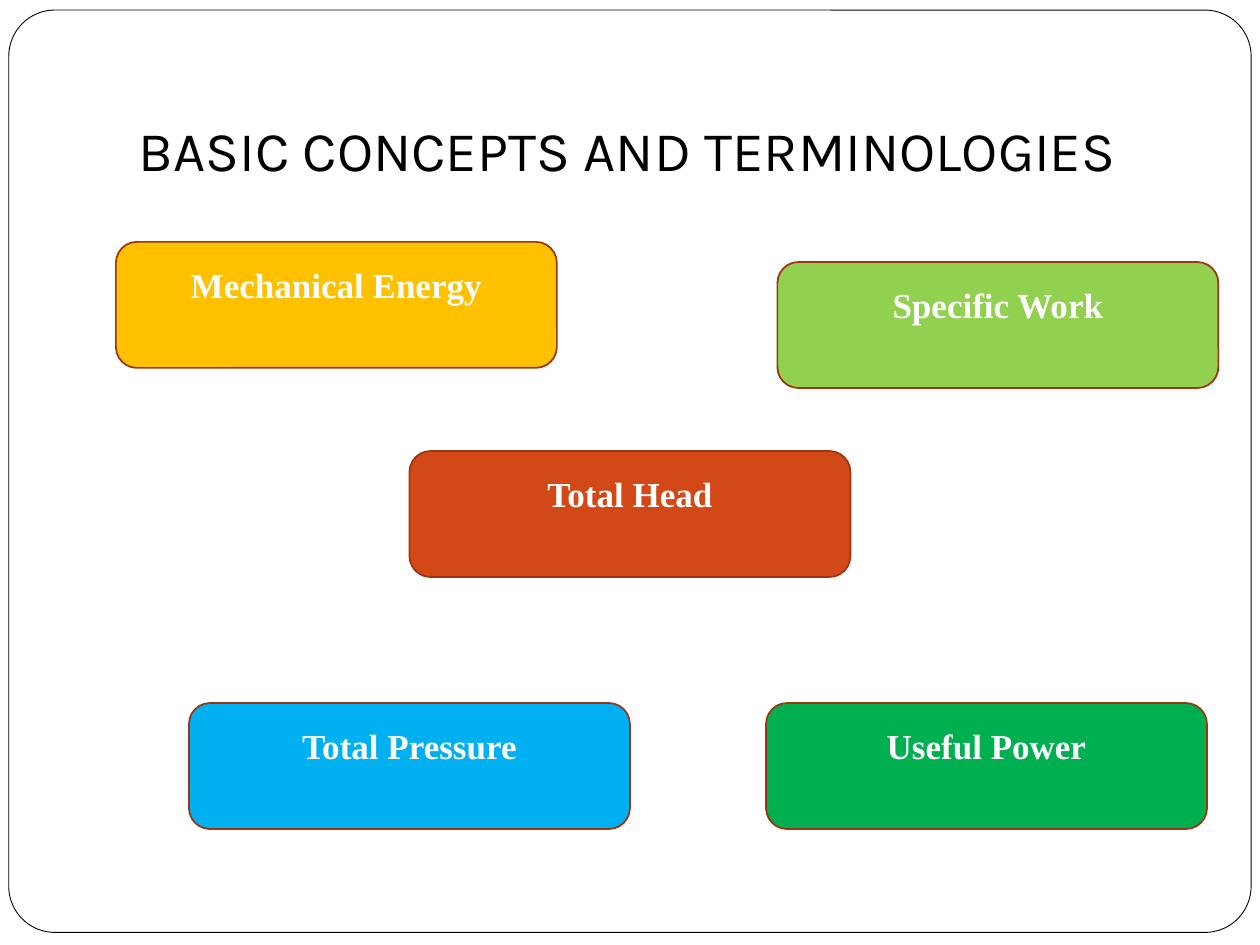
import pptx
import pptx.dml.color
import pptx.enum.shapes
import pptx.enum.text
import pptx.util

Inches = pptx.util.Inches
Pt = pptx.util.Pt
ALIGN = pptx.enum.text.PP_ALIGN
ANCHOR = pptx.enum.text.MSO_ANCHOR

COLORS = {
    "white": "FFFFFF",
    "black": "000000",
    "outline": "9C3511",
    "amber": "FFC000",
    "rust": "D34817",
    "lime": "92D050",
    "sky": "00B0F0",
    "green": "00B050",
}

TITLE_FONT = {"name": "Karla", "size": Pt(32), "bold": False}
CONCEPT_FONT = {"name": "Times New Roman", "size": Pt(20), "bold": True}

TITLE_FRAME = {
    "word_wrap": True,
    "auto_size": pptx.enum.text.MSO_AUTO_SIZE.NONE,
    "vertical_anchor": ANCHOR.BOTTOM,
    "margin_left": Inches(0.1),
    "margin_right": Inches(0.1),
    "margin_top": Inches(0.05),
    "margin_bottom": Inches(0.1),
}
CONCEPT_FRAME = {
    "word_wrap": True,
    "vertical_anchor": ANCHOR.MIDDLE,
    "margin_top": Inches(0.05),
    "margin_bottom": Inches(0.37),
}

CONCEPT_SIZE = (3.5, 1)
CONCEPTS = [
    ("Mechanical Energy", 0.92, 1.92, "amber"),
    ("Total Head", 3.25, 3.58, "rust"),
    ("Specific Work", 6.17, 2.08, "lime"),
    ("Total Pressure", 1.5, 5.58, "sky"),
    ("Useful Power", 6.08, 5.58, "green"),
]


def color(name):
    return pptx.dml.color.RGBColor.from_string(COLORS[name])


def apply_format(target, values):
    for attribute, value in values.items():
        setattr(target, attribute, value)


def write_text(shape, text, frame_format, font_format, color_name, alignment):
    text_frame = shape.text_frame
    text_frame.text = text
    apply_format(text_frame, frame_format)
    paragraph = text_frame.paragraphs[0]
    paragraph.alignment = alignment
    font = paragraph.runs[0].font
    apply_format(font, font_format)
    font.color.rgb = color(color_name)


def add_rounded_box(slide, box, fill, line, line_width):
    shape = slide.shapes.add_shape(
        pptx.enum.shapes.MSO_SHAPE.ROUNDED_RECTANGLE, *map(Inches, box)
    )
    shape.shadow.inherit = False
    shape.fill.solid()
    shape.fill.fore_color.rgb = color(fill)
    shape.line.color.rgb = color(line)
    shape.line.width = Pt(line_width)
    return shape


def add_border(slide, box):
    border = add_rounded_box(slide, box, "white", "black", 0.5)
    border.adjustments[0] = 0.05
    slide.shapes.title.element.addprevious(border.element)


def place_title(slide, box, text):
    title = slide.shapes.title
    apply_format(title, dict(zip(("left", "top", "width", "height"), map(Inches, box))))
    write_text(title, text, TITLE_FRAME, TITLE_FONT, "black", ALIGN.LEFT)


def add_concept(slide, box, text, fill):
    shape = add_rounded_box(slide, box, fill, "outline", 1)
    write_text(shape, text, CONCEPT_FRAME, CONCEPT_FONT, "white", ALIGN.CENTER)


def main():
    presentation = pptx.Presentation()
    presentation.slide_width = Inches(10)
    presentation.slide_height = Inches(7.5)
    slide = presentation.slides.add_slide(presentation.slide_layouts[5])

    add_border(slide, (0.07, 0.08, 9.86, 7.32))
    place_title(slide, (1, 0.3, 8.67, 1.25), "BASIC CONCEPTS AND TERMINOLOGIES")
    for text, left, top, fill in CONCEPTS:
        add_concept(slide, (left, top, *CONCEPT_SIZE), text, fill)

    presentation.save("out.pptx")


if __name__ == "__main__":
    main()
